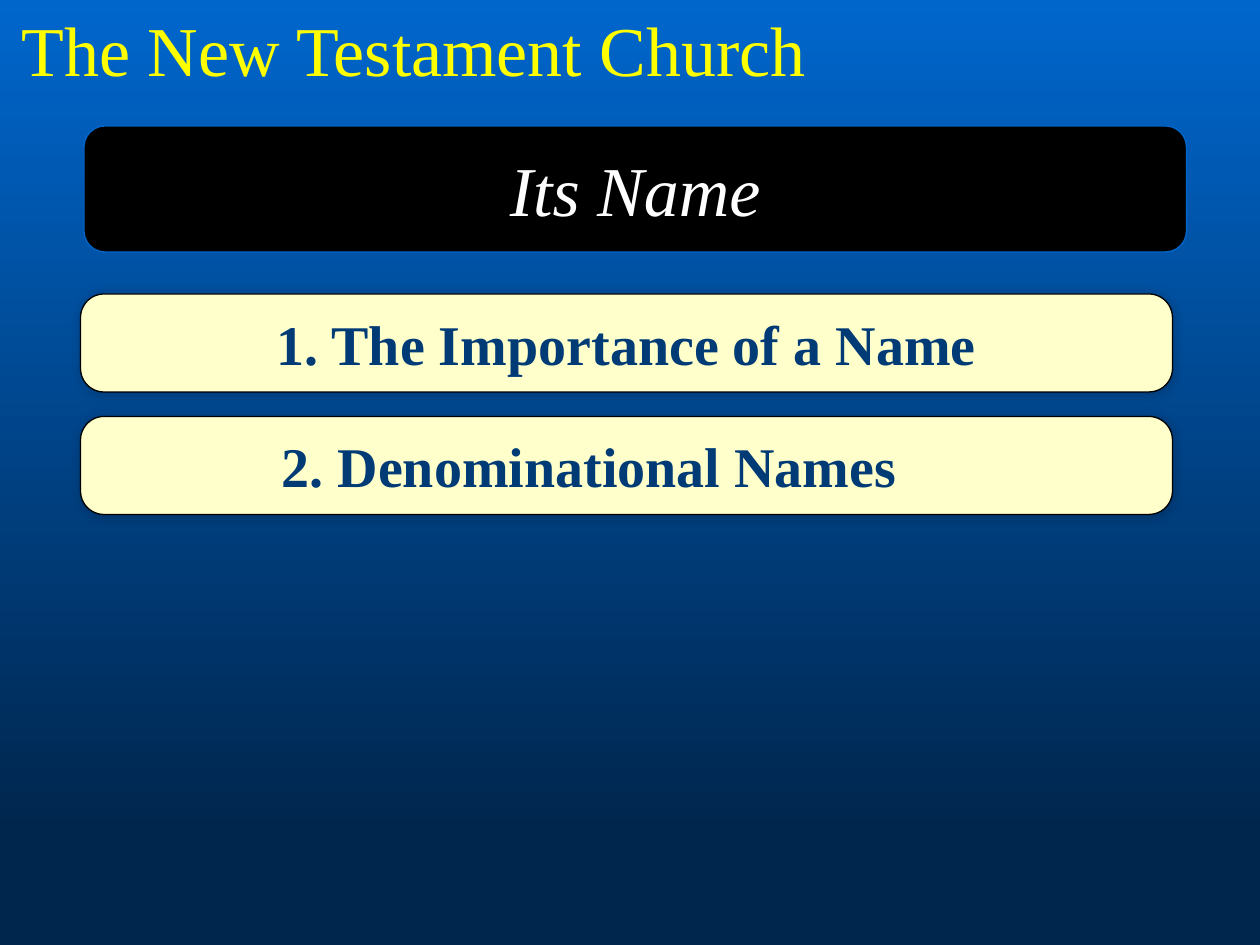
import pptx
import pptx.dml.color
import pptx.enum.dml
import pptx.enum.shapes
import pptx.enum.text
import pptx.oxml
import pptx.oxml.ns
import pptx.util

Pt = pptx.util.Pt
RGBColor = pptx.dml.color.RGBColor
Alignment = pptx.enum.text.PP_ALIGN
Anchor = pptx.enum.text.MSO_ANCHOR

FONT = "Times New Roman"
SKY = RGBColor(0x00, 0x66, 0xCC)
NIGHT = RGBColor(0x00, 0x26, 0x4D)
NAVY = RGBColor(0x00, 0x3B, 0x76)
CREAM = RGBColor(0xFF, 0xFF, 0xCC)
YELLOW = RGBColor(0xFF, 0xFF, 0x00)
WHITE = RGBColor(0xFF, 0xFF, 0xFF)
BLACK = RGBColor(0x00, 0x00, 0x00)


def paint_background(slide):
    fill = slide.background.fill
    fill.gradient()
    fill.gradient_angle = 270
    top, bottom = fill.gradient_stops
    top.color.rgb, top.position = SKY, 0
    bottom.color.rgb, bottom.position = NIGHT, 0.88


def write_text(shape, text, size, color, alignment=Alignment.CENTER):
    paragraph = shape.text_frame.paragraphs[0]
    paragraph.text = text
    paragraph.alignment = alignment
    font = paragraph.font
    font.name, font.size, font.color.rgb = FONT, Pt(size), color
    return paragraph


def place_title(slide, text, left, top, width, height):
    title = slide.shapes.title
    title.left, title.top = Pt(left), Pt(top)
    title.width, title.height = Pt(width), Pt(height)
    frame = title.text_frame
    frame.word_wrap = False
    frame.vertical_anchor = Anchor.TOP
    frame.auto_size = pptx.enum.text.MSO_AUTO_SIZE.SHAPE_TO_FIT_TEXT
    paragraph = write_text(title, text, 40, YELLOW)
    paragraph.line_spacing = 1.0
    paragraph.space_before = Pt(0)
    outline = pptx.oxml.parse_xml(
        f'<a:ln {pptx.oxml.ns.nsdecls("a")} w="{Pt(0.75)}"><a:solidFill>'
        f'<a:srgbClr val="{SKY}"/></a:solidFill></a:ln>')
    paragraph.runs[0].font._element.insert(0, outline)


def add_panel(slide, left, top, width, height, fill, line):
    panel = slide.shapes.add_shape(
        pptx.enum.shapes.MSO_SHAPE.ROUNDED_RECTANGLE,
        Pt(left), Pt(top), Pt(width), Pt(height))
    panel.shadow.inherit = False
    panel.fill.solid()
    panel.fill.fore_color.rgb = fill
    panel.line.color.rgb = line
    panel.line.width = Pt(0.75)
    panel.text_frame.word_wrap = True
    panel.text_frame.vertical_anchor = Anchor.MIDDLE
    return panel


def add_heading(slide, text, left, top, width, height):
    panel = add_panel(slide, left, top, width, height, BLACK, SKY)
    write_text(panel, text, 40, WHITE).font.italic = True


def add_soft_shadow(shape):
    effects = shape._element.spPr.find(pptx.oxml.ns.qn("a:effectLst"))
    effects.append(pptx.oxml.parse_xml(
        f'<a:outerShdw {pptx.oxml.ns.nsdecls("a")} blurRad="{Pt(6)}" dist="0" '
        f'dir="13500000"><a:srgbClr val="{BLACK}"><a:alpha val="20000"/>'
        '</a:srgbClr></a:outerShdw>'))


def add_points(slide, points, left, top, width, height, pitch):
    """Stack one bar per point; an indent makes the point left-aligned."""
    for index, (text, indent) in enumerate(points):
        bar = add_panel(slide, left, top + index * pitch, width, height, CREAM, BLACK)
        bar.adjustments[0] = 0.24
        add_soft_shadow(bar)
        alignment = Alignment.LEFT if indent else Alignment.CENTER
        if indent:
            bar.text_frame.margin_left = Pt(indent)
        write_text(bar, text, 32, NAVY, alignment).font.bold = True


def main():
    presentation = pptx.Presentation()
    presentation.slide_width, presentation.slide_height = Pt(720), Pt(540)
    slide = presentation.slides.add_slide(presentation.slide_layouts[5])
    paint_background(slide)
    place_title(slide, "The New Testament Church", 3, 0, 467, 55.5)
    add_heading(slide, "Its Name", 48, 72, 630, 72)
    points = [("1. The Importance of a Name", 0), ("2. Denominational Names", 111)]
    add_points(slide, points, 46, 168, 624, 56, pitch=70)
    presentation.save("out.pptx")


if __name__ == "__main__":
    main()
